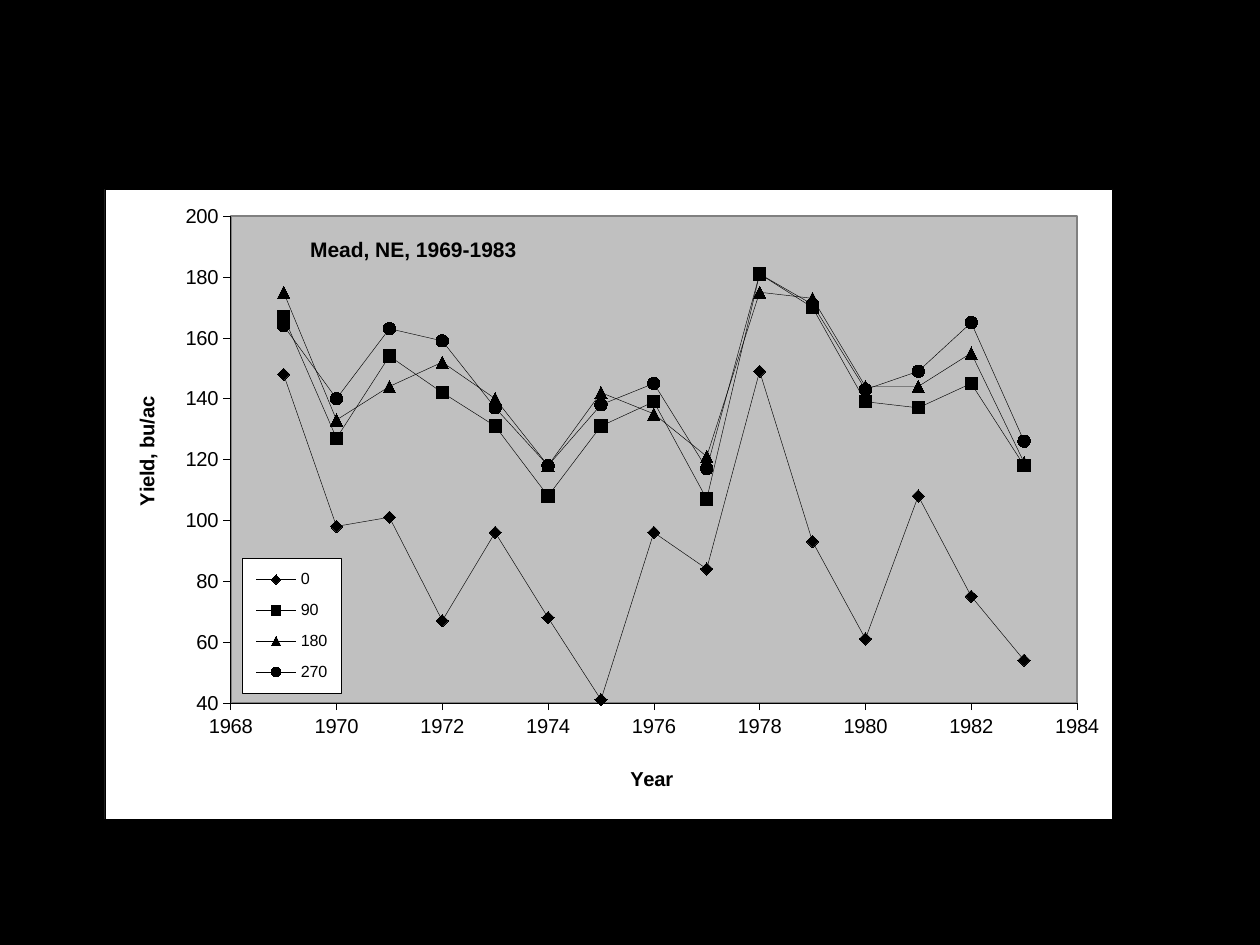
from lxml import etree
from pptx import Presentation
from pptx import util as u
from pptx.chart import data as chart_data
from pptx.dml.color import RGBColor
from pptx.enum import chart as ch
from pptx.oxml import parse_xml
from pptx.oxml.ns import nsdecls, qn

COLORS = {"ink": "000000", "paper": "FFFFFF", "plot": "C0C0C0", "frame": "808080"}
FONT = "Arial"
YEARS = range(1969, 1984)
YIELDS = {
    "0": [148, 98, 101, 67, 96, 68, 41, 96, 84, 149, 93, 61, 108, 75, 54],
    "90": [167, 127, 154, 142, 131, 108, 131, 139, 107, 181, 170, 139, 137, 145, 118],
    "180": [175, 133, 144, 152, 140, 118, 142, 135, 121, 175, 173, 144, 144, 155, 119],
    "270": [164, 140, 163, 159, 137, 118, 138, 145, 117, 181, 171, 143, 149, 165, 126],
}
MARKERS = [ch.XL_MARKER_STYLE.DIAMOND, ch.XL_MARKER_STYLE.SQUARE,
           ch.XL_MARKER_STYLE.TRIANGLE, ch.XL_MARKER_STYLE.CIRCLE]


def rgb(name):
    """Return the named colour."""
    return RGBColor.from_string(COLORS[name])


def style_font(font, size, bold=False):
    """Apply the chart typeface to a font."""
    font.name, font.size, font.bold = FONT, u.Pt(size), bold
    font.color.rgb = rgb("ink")


def style_line(line, width=0.25, color="ink"):
    """Give a line its colour and width in points."""
    line.color.rgb = rgb(color)
    line.width = u.Pt(width)


def box_format(fill, line, width):
    """Return chart shape properties with a solid fill and outline."""
    return parse_xml(
        f'<c:spPr {nsdecls("c", "a")}><a:solidFill><a:srgbClr val="{COLORS[fill]}"/></a:solidFill>'
        f'<a:ln w="{u.Pt(width)}"><a:solidFill><a:srgbClr val="{COLORS[line]}"/></a:solidFill></a:ln></c:spPr>')


def set_layout(part, inner=False, **fractions):
    """Place a chart part by fractions of the chart area."""
    for old in part.findall(qn("c:layout")):
        part.remove(old)
    layout = etree.Element(qn("c:layout"))
    manual = etree.SubElement(layout, qn("c:manualLayout"))
    settings = {"layoutTarget": "inner"} if inner else {}
    settings.update(xMode="edge", yMode="edge", **fractions)
    for tag, value in settings.items():
        etree.SubElement(manual, qn(f"c:{tag}")).set("val", str(value))
    leads = len(part) and part[0].tag in (qn("c:tx"), qn("c:legendPos"))
    part.insert(1 if leads else 0, layout)


def write_title(owner, text, size=11.5, **position):
    """Write and place the title of a chart or an axis."""
    owner.has_title = True
    title = owner.chart_title if hasattr(owner, "chart_title") else owner.axis_title
    title.text_frame.text = text
    style_font(title.text_frame.paragraphs[0].runs[0].font, size, bold=True)
    element = title._element
    set_layout(element, **position)
    element.find(qn("c:overlay")).set("val", "1")


def format_axis(axis, low, high, step):
    """Set the scale, ticks and labels of an axis."""
    axis.minimum_scale, axis.maximum_scale, axis.major_unit = low, high, step
    axis.has_major_gridlines = False
    axis.major_tick_mark = ch.XL_TICK_MARK.OUTSIDE
    axis.minor_tick_mark = ch.XL_TICK_MARK.NONE
    axis.tick_label_position = ch.XL_TICK_LABEL_POSITION.LOW
    axis.crosses = ch.XL_AXIS_CROSSES.MINIMUM
    axis.tick_labels.number_format = "General"
    axis.tick_labels.number_format_is_linked = False
    style_font(axis.tick_labels.font, 11.5)
    style_line(axis.format.line)


def format_series(series, marker_style):
    """Draw a series as a thin line with black markers."""
    series.smooth = False
    style_line(series.format.line)
    series.marker.style, series.marker.size = marker_style, 7
    series.marker.format.fill.solid()
    series.marker.format.fill.fore_color.rgb = rgb("ink")
    style_line(series.marker.format.line)


def format_legend(chart):
    """Place the legend inside the lower left of the plot."""
    chart.has_legend = True
    legend = chart.legend
    legend.position = ch.XL_LEGEND_POSITION.RIGHT
    legend.include_in_layout = False
    style_font(legend.font, 9.2)
    set_layout(legend._element, x=0.136, y=0.586, w=0.099, h=0.215)
    legend._element.find(qn("c:overlay")).addnext(box_format("paper", "ink", 0.25))


def add_yield_chart(slide, left, top, width, height):
    """Add the chart of yield by year for each rate."""
    yields = chart_data.XyChartData()
    for rate, values in YIELDS.items():
        rate_series = yields.add_series(rate)
        for year, value in zip(YEARS, values):
            rate_series.add_data_point(year, value)
    chart = slide.shapes.add_chart(
        ch.XL_CHART_TYPE.XY_SCATTER_LINES, left, top, width, height, yields).chart
    style_font(chart.font, 10)
    chart.plots[0].vary_by_categories = False
    for series, marker_style in zip(chart.plots[0].series, MARKERS):
        format_series(series, marker_style)
    format_axis(chart.category_axis, 1968, 1984, 2)
    format_axis(chart.value_axis, 40, 200, 20)
    write_title(chart, "Mead, NE, 1969-1983", size=12, x=0.2, y=0.07)
    write_title(chart.category_axis, "Year", x=0.518, y=0.91)
    write_title(chart.value_axis, "Yield, bu/ac", x=0.025, y=0.324)
    format_legend(chart)
    chart_part = chart._chartSpace.find(qn("c:chart"))
    plot_area = chart_part.find(qn("c:plotArea"))
    set_layout(plot_area, inner=True, x=0.125, y=0.043, w=0.84, h=0.773)
    plot_area.append(box_format("plot", "frame", 1))
    chart_part.addnext(box_format("paper", "ink", 0.25))


def main():
    """Build the slide and save it."""
    deck = Presentation()
    deck.slide_width, deck.slide_height = u.Inches(10), u.Inches(7.5)
    slide = deck.slides.add_slide(deck.slide_layouts[6])
    slide.background.fill.solid()
    slide.background.fill.fore_color.rgb = rgb("ink")
    add_yield_chart(slide, u.Inches(0.83), u.Inches(1.5), u.Inches(8), u.Inches(5))
    deck.save("out.pptx")


if __name__ == "__main__":
    main()
